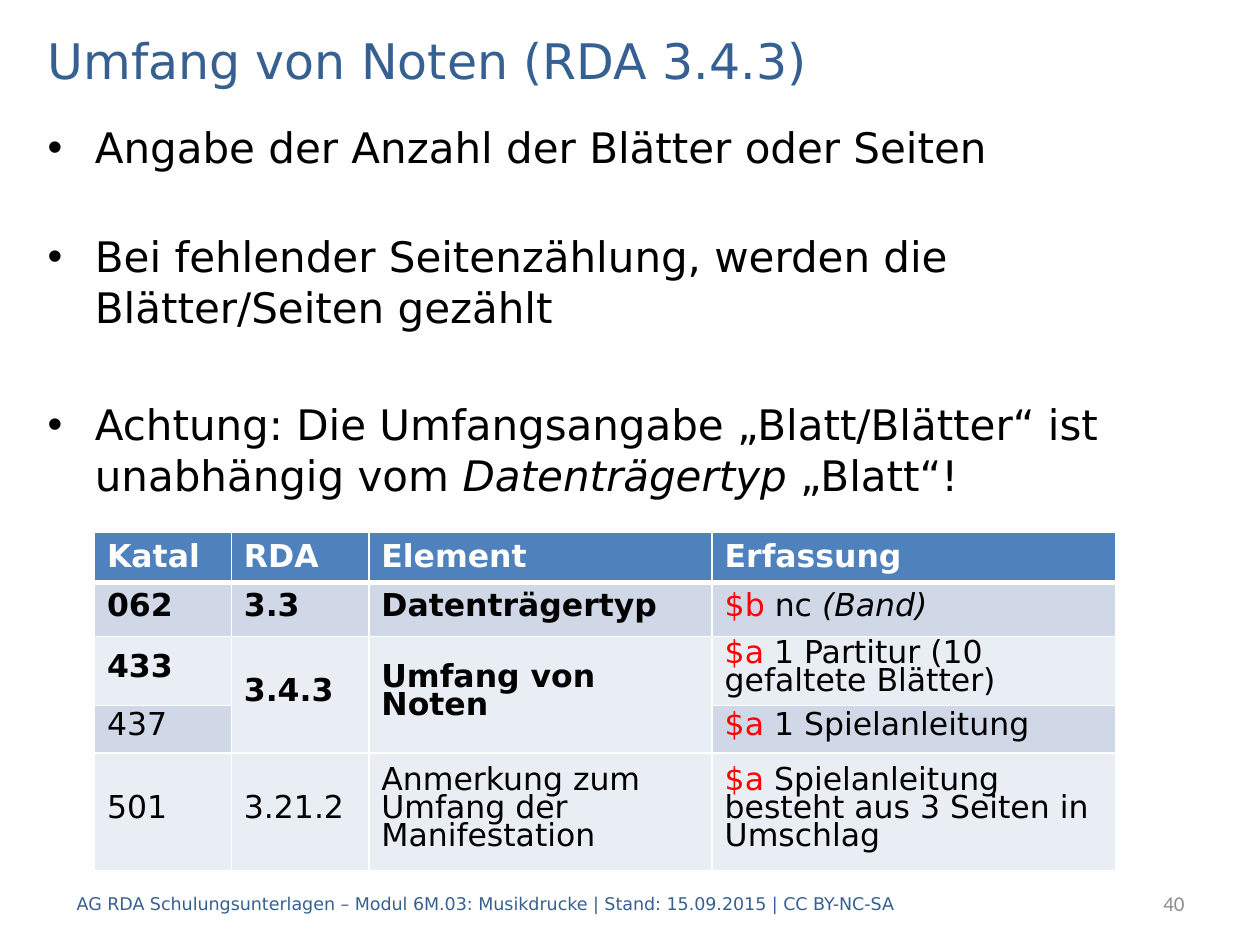
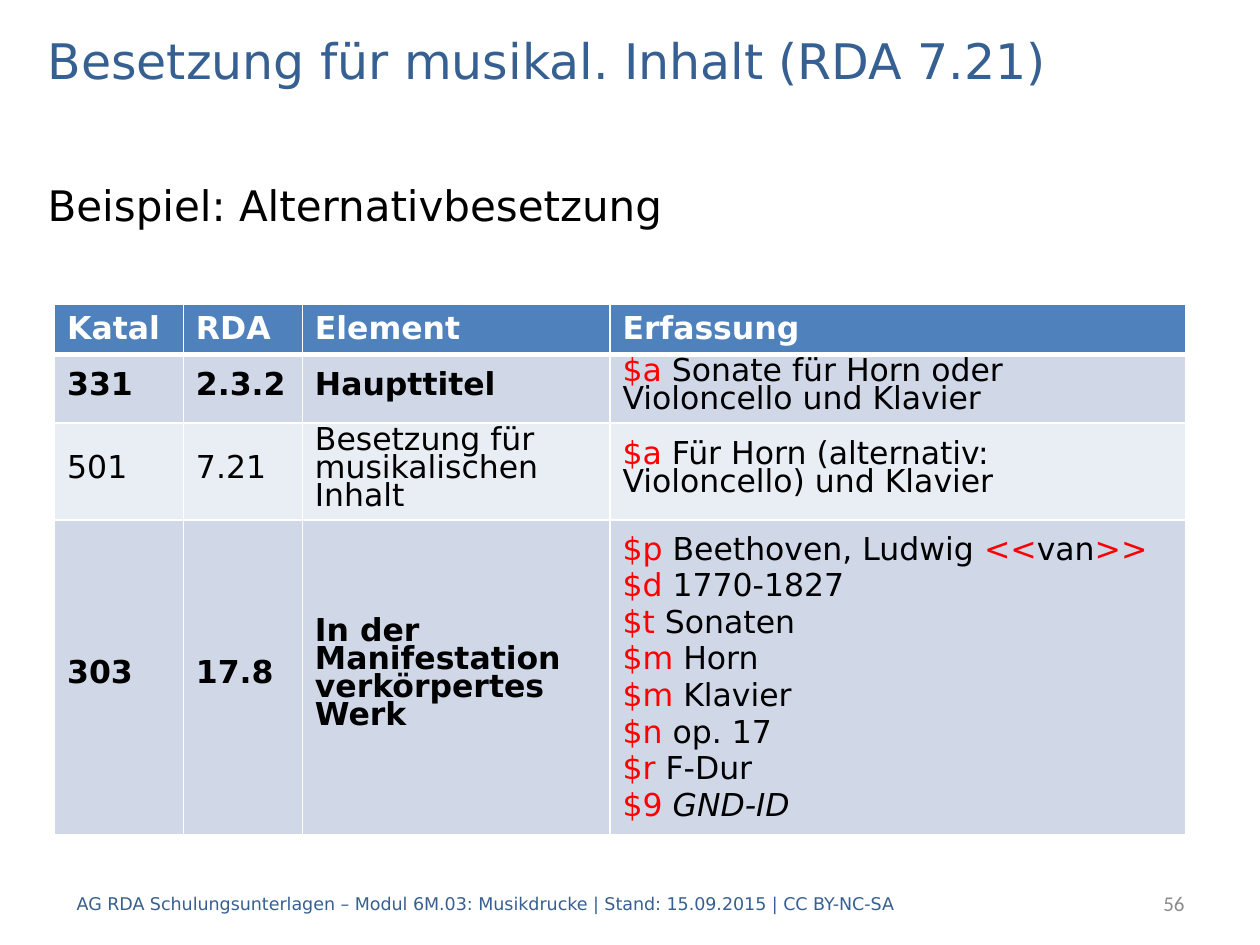
from pptx import Presentation
from pptx.dml.color import RGBColor
from pptx.enum.text import MSO_ANCHOR, MSO_AUTO_SIZE, PP_ALIGN
from pptx.oxml import parse_xml
from pptx.oxml.ns import nsdecls
from pptx.util import Pt

LEFT, RIGHT = PP_ALIGN.LEFT, PP_ALIGN.RIGHT
TOP, MID = MSO_ANCHOR.TOP, MSO_ANCHOR.MIDDLE
FIXED = MSO_AUTO_SIZE.NONE

HUES = {
    "blue": "376092", "black": "000000", "red": "FF0000", "grey": "8C8C8C",
    "white": "FFFFFF", "head": "4F81BD", "dark": "D0D8E8", "light": "E9EDF4",
}
FONT = "DejaVu Sans"
FOOT = ("AG RDA Schulungsunterlagen – Modul 6M.03: Musikdrucke"
        " | Stand: 15.09.2015 | CC BY-NC-SA")
HEADS = ["Katal", "RDA", "Element", "Erfassung"]

# Each cell is a list of lines, each line a list of runs.
# Runs that start with $, < or > are red; a leading _ means italic.
# "bold" tells whether the first three cells of a row are bold.
# Rows grow to fit their text.
PAGES = [
    {
        "title": "Umfang von Noten (RDA 3.4.3)",
        "number": "40",
        "list": [
            ["Angabe der Anzahl der Blätter oder Seiten"],
            ["Bei fehlender Seitenzählung, werden die Blätter/Seiten gezählt"],
            ["Achtung: Die Umfangsangabe „Blatt/Blätter“ ist unabhängig vom ",
             "_Datenträgertyp", " „Blatt“!"],
        ],
        "top": 65.8,
        "gaps": [0, 33.3, 37.9],
        "bullet": True,
        "place": (54, 304),
        "cols": [78.2, 78.6, 196.2, 230.6],
        "rows": [26.6, 31, 27.4, 27.4, 67],
        "bold": [True, True, False, False],
        "cells": [
            ["062", "3.3", "Datenträgertyp", [["$b ", "nc ", "_(Band)"]]],
            ["433", "3.4.3", "Umfang von Noten",
             [["$a ", "1 Partitur (10 gefaltete Blätter)"]]],
            ["437", None, None, [["$a ", "1 Spielanleitung"]]],
            ["501", "3.21.2", "Anmerkung zum Umfang der Manifestation",
             [["$a ", "Spielanleitung besteht aus 3 Seiten in Umschlag"]]],
        ],
    },
    {
        "title": "Besetzung für musikal. Inhalt (RDA 7.21)",
        "number": "56",
        "list": [["Beispiel: Alternativbesetzung"]],
        "top": 99,
        "gaps": [0],
        "bullet": False,
        "place": (31.2, 173.8),
        "cols": [73.6, 68, 175.8, 328.9],
        "rows": [19.4, 36, 36, 36],
        "bold": [True, False, True],
        "cells": [
            ["331", "2.3.2", "Haupttitel",
             [["$a ", "Sonate für Horn oder Violoncello und Klavier"]]],
            ["501", "7.21", "Besetzung für musikalischen Inhalt",
             [["$a ", "Für Horn (alternativ: Violoncello) und Klavier"]]],
            ["303", "17.8", "In der Manifestation verkörpertes Werk",
             [["$p ", "Beethoven, Ludwig ", "<<", "van", ">>"],
              ["$d ", "1770-1827"], ["$t ", "Sonaten"], ["$m ", "Horn"],
              ["$m ", "Klavier"], ["$n ", "op. 17"], ["$r ", "F-Dur"],
              ["$9 ", "_GND-ID"]]],
        ],
    },
]


def write(frame, lines, size=18, hue="black", font=FONT, bold=False,
          align=LEFT, anchor=MID, pitch=None, gaps=None):
    """Fill a text frame with a string or with lines of runs."""
    if isinstance(lines, str):
        lines = [[lines]]
    frame.word_wrap = True
    frame.vertical_anchor = anchor
    for i, runs in enumerate(lines):
        para = frame.paragraphs[0] if i == 0 else frame.add_paragraph()
        para.alignment = align
        if pitch:
            para.line_spacing = Pt(pitch)
        if gaps:
            para.space_before = Pt(gaps[i])
        for word in runs:
            run = para.add_run()
            run.text = word.removeprefix("_")
            face = run.font
            face.name, face.size, face.bold = font, Pt(size), bold
            face.italic = word.startswith("_")
            tint = "red" if word[0] in "$<>" else hue
            face.color.rgb = RGBColor.from_string(HUES[tint])


def paint(cell, hue, top=1, bottom=1):
    """Give a cell its fill and white borders."""
    props = cell._tc.get_or_add_tcPr()
    for side, width in zip("LRTB", (1, 1, top, bottom)):
        props.append(parse_xml(
            f'<a:ln{side} {nsdecls("a")} w="{Pt(width)}"><a:solidFill>'
            f'<a:srgbClr val="{HUES["white"]}"/></a:solidFill></a:ln{side}>'))
    cell.fill.solid()
    cell.fill.fore_color.rgb = RGBColor.from_string(HUES[hue])


deck = Presentation()
deck.slide_width, deck.slide_height = Pt(720), Pt(540)

for page in PAGES:
    slide = deck.slides.add_slide(deck.slide_layouts[1])

    # Title and list
    title, body = slide.placeholders
    base = page["top"]
    for shape, top, height in ((title, 14, 40.3), (body, base, 496.8 - base)):
        shape.left, shape.top = Pt(20), Pt(top)
        shape.width, shape.height = Pt(680.4), Pt(height)
        shape.text_frame.auto_size = FIXED
    write(title.text_frame, page["title"], size=28, hue="blue")
    write(body.text_frame, page["list"], size=24, anchor=TOP, pitch=29,
          gaps=page["gaps"])
    for para in body.text_frame.paragraphs:
        props = para._p.get_or_add_pPr()
        inset = Pt(27) if page["bullet"] else 0
        props.set("marL", str(inset))
        props.set("indent", str(-inset))
        mark = 'buChar char="•"' if page["bullet"] else "buNone"
        name, _, rest = mark.partition(" ")
        props.append(parse_xml(f'<a:{name} {nsdecls("a")} {rest}/>'))

    # Footer and page number
    foot = slide.shapes.add_textbox(Pt(36.7), Pt(501.8), Pt(601.2), Pt(28.8))
    write(foot.text_frame, FOOT, size=10, hue="blue")
    num = slide.shapes.add_textbox(Pt(569.5), Pt(501.8), Pt(114.5), Pt(28.8))
    write(num.text_frame, page["number"], size=12, hue="grey",
          font="Calibri", align=RIGHT)

    # Table
    cols, rows = page["cols"], page["rows"]
    left, top = page["place"]
    grid = slide.shapes.add_table(len(rows), len(cols), Pt(left), Pt(top),
                                  Pt(sum(cols)), Pt(sum(rows))).table
    for col, width in zip(grid.columns, cols):
        col.width = Pt(width)
    for row, height in zip(grid.rows, rows):
        row.height = Pt(height)

    for c, head in enumerate(HEADS):
        cell = grid.cell(0, c)
        paint(cell, "head", bottom=3)
        write(cell.text_frame, head, hue="white", bold=True, anchor=TOP)
        cell.vertical_anchor = TOP

    for r, (texts, bold) in enumerate(zip(page["cells"], page["bold"]), 1):
        for c, text in enumerate(texts):
            cell = grid.cell(r, c)
            if text is None:
                paint(cell, "light")
                grid.cell(r - 1, c).merge(cell)
                continue
            paint(cell, "dark" if r % 2 else "light", top=3 if r == 1 else 1)
            write(cell.text_frame, text, bold=bold and c < 3,
                  pitch=16 if len(text) == 1 or c < 3 else None)
            cell.vertical_anchor = MID

deck.save("out.pptx")
